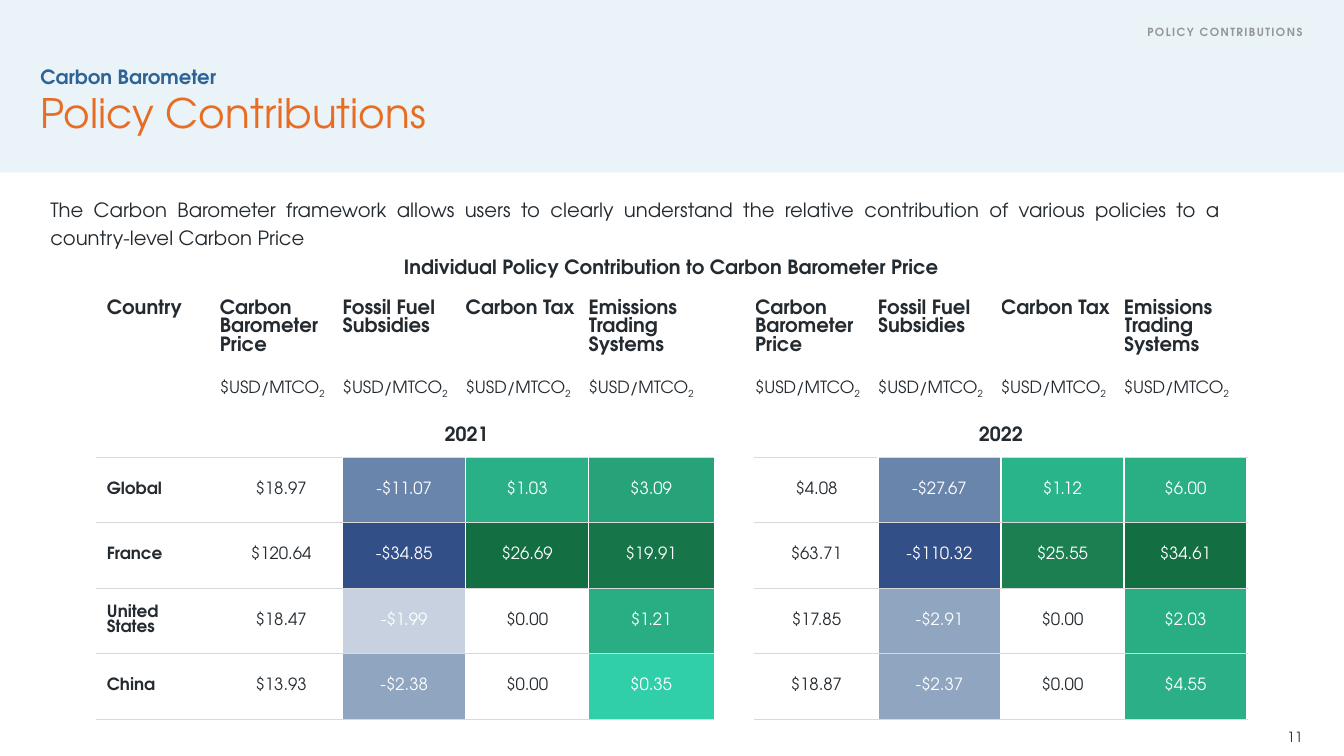
from dataclasses import dataclass

from lxml import etree
from pptx import Presentation
from pptx import util as u
from pptx.dml.color import RGBColor
from pptx.enum import shapes, text
from pptx.oxml.ns import qn

PX = 9144  # EMU per px, 100 px to the inch


@dataclass(frozen=True)
class Theme:
    font: str = "TeX Gyre Adventor"
    band: str = "EAF3F7"
    blue: str = "2E6396"
    orange: str = "E86D24"
    ink: str = "232A30"
    grey: str = "939598"
    rule: str = "D9D9D9"
    white: str = "FFFFFF"
    title: int = 29
    body: int = 14
    cell: int = 12
    page: int = 10
    tag: int = 8


T = Theme()
LEFT, CENTER, RIGHT, JUSTIFY = (getattr(text.PP_ALIGN, a) for a in ("LEFT", "CENTER", "RIGHT", "JUSTIFY"))
TOP, MIDDLE = text.MSO_ANCHOR.TOP, text.MSO_ANCHOR.MIDDLE

HEADINGS = ["Carbon Barometer Price", "Fossil Fuel Subsidies", "Carbon Tax", "Emissions Trading Systems"]
UNIT = "$USD/MTCO"
YEARS = ["2021", "2022"]
# Per country and year: a price, then the policy contributions with their tints
PRICES = {
    "Global": [
        [("$18.97", None), ("-$11.07", "6A85AC"), ("$1.03", "2AB086"), ("$3.09", "26A378")],
        [("$4.08", None), ("-$27.67", "6A85AC"), ("$1.12", "2AB48A"), ("$6.00", "2AAF85")],
    ],
    "France": [
        [("$120.64", None), ("-$34.85", "334F88"), ("$26.69", "136E41"), ("$19.91", "177649")],
        [("$63.71", None), ("-$110.32", "334F88"), ("$25.55", "1C7F51"), ("$34.61", "136E41")],
    ],
    "United States": [
        [("$18.47", None), ("-$1.99", "C7D1DF"), ("$0.00", None), ("$1.21", "29AE84")],
        [("$17.85", None), ("-$2.91", "8FA5C0"), ("$0.00", None), ("$2.03", "29AE84")],
    ],
    "China": [
        [("$13.93", None), ("-$2.38", "8FA5C0"), ("$0.00", None), ("$0.35", "30CFAA")],
        [("$18.87", None), ("-$2.37", "8FA5C0"), ("$0.00", None), ("$4.55", "2AAF86")],
    ],
}
COLS = [122, 122, 122, 122, 124, 41, 122, 122, 122, 122]
ROWS = [77, 39, 41] + [65] * len(PRICES)
GAP_COL = 5
YEAR_COLS = [1, 6]
YEAR_ROW = 2


def add_run(p, content, size=T.body, color=T.ink, bold=False, spacing=None, baseline=None):
    r = p.add_run()
    r.text = content
    r.font.name, r.font.size, r.font.bold = T.font, u.Pt(size), bold
    r.font.color.rgb = RGBColor.from_string(color)
    for key, value in (("spc", spacing), ("baseline", baseline)):
        if value is not None:
            r.font._element.set(key, str(value))


def add_text(s, box, content, align=LEFT, anchor=TOP, insets=(0, 5, 0, 5), line=None, **fmt):
    """Add a text box with one run and return its paragraph."""
    tf = s.shapes.add_textbox(*(v * PX for v in box)).text_frame
    tf.word_wrap, tf.vertical_anchor = True, anchor
    tf.margin_left, tf.margin_top, tf.margin_right, tf.margin_bottom = (v * PX for v in insets)
    p = tf.paragraphs[0]
    p.alignment = align
    if line:
        p.line_spacing = line
    add_run(p, content, **fmt)
    return p


def set_border(cell, color, *sides, width=1):
    """Draw the named sides (L, R, T, B); a colour of None leaves them clear."""
    tc_pr = cell._tc.get_or_add_tcPr()
    for side in sides:
        ln = etree.Element(qn(f"a:ln{side}"), w=str(u.Pt(width)))
        if color:
            fill = etree.SubElement(ln, qn("a:solidFill"))
            etree.SubElement(fill, qn("a:srgbClr"), val=color)
        else:
            etree.SubElement(ln, qn("a:noFill"))
        tc_pr.insert("LRTB".index(side), ln)


def fill_cell(cell, content, align=LEFT, anchor=MIDDLE, left=10, right=10, **fmt):
    cell.vertical_anchor = anchor
    cell.margin_left, cell.margin_right = left * PX, right * PX
    cell.margin_top = cell.margin_bottom = 5 * PX
    p = cell.text_frame.paragraphs[0]
    p.alignment = align
    add_run(p, content, **fmt)
    return p


def style_grid(table):
    """Clear the table style, rule the rows from the years down and keep empty cells small."""
    for i in range(len(ROWS)):
        for j in range(len(COLS)):
            cell = table.cell(i, j)
            cell.fill.background()
            p = cell.text_frame.paragraphs[0]
            etree.SubElement(p._p, qn("a:endParaRPr"), sz=str(T.cell * 100))
            gap = j == GAP_COL
            set_border(cell, None if gap else T.white, "L", "R")
            for side, ruled in (("T", i > YEAR_ROW), ("B", i >= YEAR_ROW)):
                color = None if gap else T.rule if ruled else T.white
                set_border(cell, color, side, width=0.25 if ruled else 1)


def header(s, x, y, w, h):
    band = s.shapes.add_shape(shapes.MSO_SHAPE.RECTANGLE, x * PX, y * PX, w * PX, h * PX)
    band.shadow.inherit = False
    band.fill.solid()
    band.fill.fore_color.rgb = RGBColor.from_string(T.band)
    band.line.fill.background()
    p = add_text(s, (x + 40, y + 59, w - 81, 84), "Carbon Barometer", color=T.blue, bold=True)
    p.add_line_break()
    add_run(p, "Policy Contributions", size=T.title, color=T.orange)
    add_text(s, (x + 40, y + 18, w - 81, 24), "POLICY CONTRIBUTIONS", align=RIGHT, line=1.2,
             size=T.tag, color=T.grey, bold=True, spacing=100)


def introduction(s, x, y, w, h):
    add_text(s, (x, y, w, h - 33),
             "The Carbon Barometer framework allows users to clearly understand the relative "
             "contribution of various policies to a country-level Carbon Price",
             align=JUSTIFY, insets=(10, 5, 0, 5), line=1.2)
    add_text(s, (x + 296, y + h - 44, 660, 44), "Individual Policy Contribution to Carbon Barometer Price",
             align=CENTER, insets=(10, 10, 10, 10), bold=True)


def price_table(s, x, y):
    frame = s.shapes.add_table(len(ROWS), len(COLS), x * PX, y * PX, sum(COLS) * PX, sum(ROWS) * PX)
    table = frame.table
    table.first_row = table.horz_banding = False
    for col, width in zip(table.columns, COLS):
        col.width = width * PX
    for row, height in zip(table.rows, ROWS):
        row.height = height * PX
    style_grid(table)

    fill_cell(table.cell(0, 0), "Country", anchor=TOP, right=0, bold=True)
    for year, start in zip(YEARS, YEAR_COLS):
        for j, heading in enumerate(HEADINGS, start):
            fill_cell(table.cell(0, j), heading, anchor=TOP, left=0, right=0, bold=True)
            p = fill_cell(table.cell(1, j), UNIT, anchor=TOP, left=0, right=0, size=T.cell)
            add_run(p, "2", size=T.cell, baseline=-25000)
        year_cell = table.cell(YEAR_ROW, start)
        year_cell.merge(table.cell(YEAR_ROW, start + len(HEADINGS) - 1))
        fill_cell(year_cell, year, align=CENTER, bold=True)

    for i, (country, years) in enumerate(PRICES.items(), YEAR_ROW + 1):
        fill_cell(table.cell(i, 0), country, size=T.cell, bold=True)
        for start, values in zip(YEAR_COLS, years):
            for j, (value, tint) in enumerate(values, start):
                cell = table.cell(i, j)
                fill_cell(cell, value, align=CENTER, size=T.cell, color=T.white if tint else T.ink)
                if tint:
                    cell.fill.solid()
                    cell.fill.fore_color.rgb = RGBColor.from_string(tint)


def main():
    prs = Presentation()
    prs.slide_width, prs.slide_height = 1333 * PX, 750 * PX
    s = prs.slides.add_slide(prs.slide_layouts[6])
    header(s, 0, 0, 1333, 171)
    introduction(s, 40, 187, 1171, 100)
    price_table(s, 96, 293)
    add_text(s, (1208, 718, 84, 26), "11", align=RIGHT, anchor=MIDDLE, size=T.page)
    prs.save("out.pptx")


if __name__ == "__main__":
    main()
